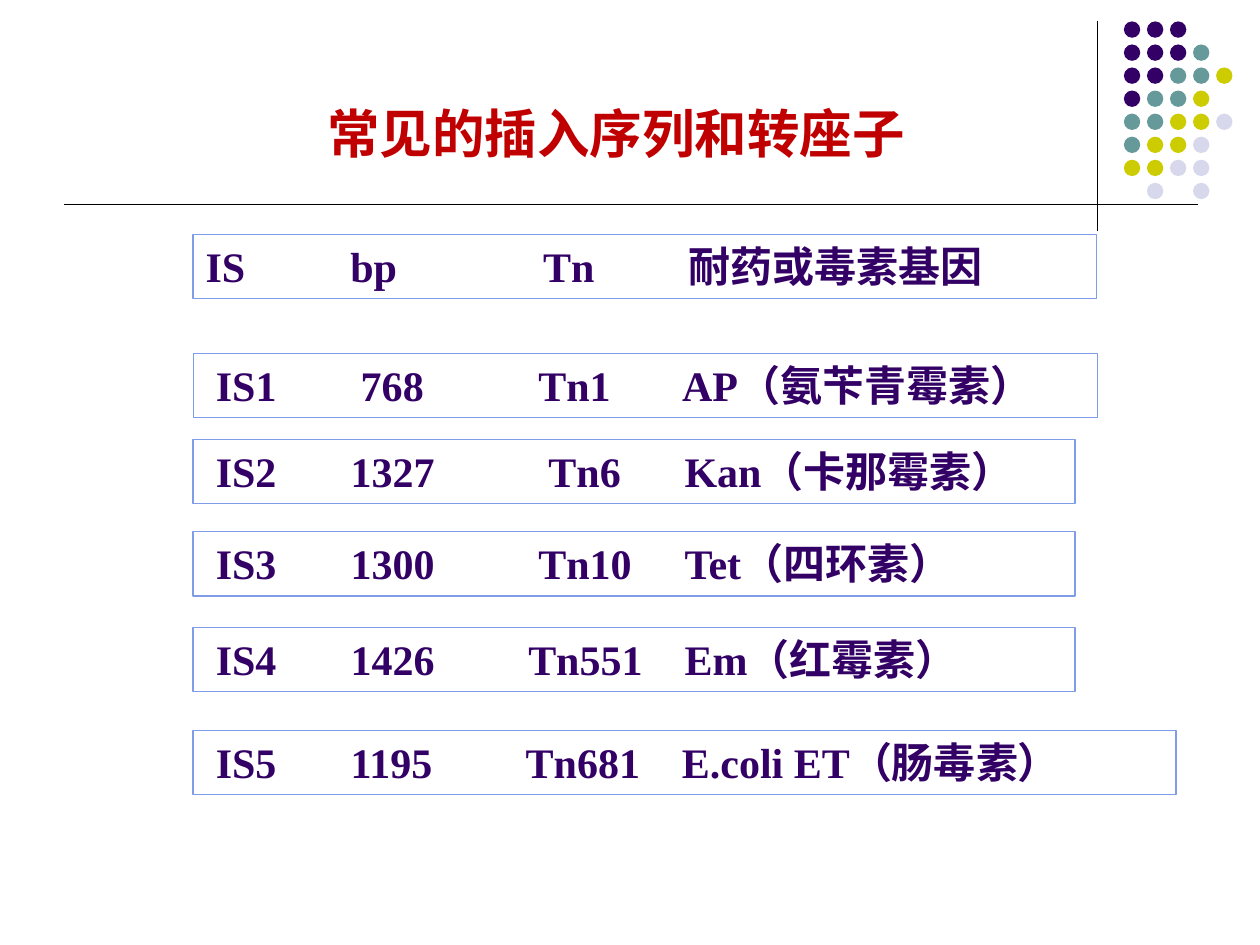
"""Build a slide listing common insertion sequences and transposons."""
from dataclasses import dataclass

from lxml import etree
from pptx import Presentation
from pptx.dml.color import RGBColor
from pptx.enum.shapes import MSO_CONNECTOR, MSO_SHAPE
from pptx.enum.text import MSO_ANCHOR, MSO_AUTO_SIZE, PP_ALIGN
from pptx.oxml.ns import qn
from pptx.slide import Slide
from pptx.text.text import TextFrame
from pptx.util import Inches, Pt

STRAIGHT = MSO_CONNECTOR.STRAIGHT
RECTANGLE, OVAL = MSO_SHAPE.RECTANGLE, MSO_SHAPE.OVAL
TOP, MIDDLE = MSO_ANCHOR.TOP, MSO_ANCHOR.MIDDLE
CENTER, JUSTIFY = PP_ALIGN.CENTER, PP_ALIGN.JUSTIFY
NO_FIT = MSO_AUTO_SIZE.NONE

WIDTH, HEIGHT = Inches(10), Inches(7.5)
TITLE_ONLY = 5
LATIN, CHINESE = "Times New Roman", "Noto Sans CJK SC"
COLORS = {
    "purple": "330066", "teal": "669999", "lime": "CCCC00", "lilac": "D8D8EC",
    "red": "C00000", "blue": "7E9CE8", "white": "FFFFFF", "black": "000000",
}
DOT_COLORS = {"P": "purple", "T": "teal", "Y": "lime", "L": "lilac"}
DOT_ROWS = ("PPP", "PPPT", "PPTTY", "PTTY", "TTYYL", "TYYL", "YYLL", " L L")
DOT_LEFT, DOT_TOP, DOT_PITCH, DOT_SIZE = 8.92, 0.17, 0.183, 0.13
ROW_LEFT, ROW_HEIGHT = 15.33, 6.8


@dataclass(frozen=True)
class Row:
    """One boxed row: slide shares in percent, inset and tab stops in inches."""
    top: float
    width: float
    cells: tuple[str, ...]
    stops: tuple[float, ...]
    inset: float = 0.18


@dataclass(frozen=True)
class Rule:
    """A straight line between two points given in percent of the slide."""
    start: tuple[float, float]
    end: tuple[float, float]
    weight: float


ROWS = (
    Row(24.8, 71.7, ("IS", "bp", "Tn", "耐药或毒素基因"), (1.15, 2.68, 3.83), 0.1),
    Row(37.4, 71.8, ("IS1", "768", "Tn1", "AP（氨苄青霉素）"), (1.15, 2.56, 3.7)),
    Row(46.5, 70, ("IS2", "1327", "Tn6", "Kan（卡那霉素）"), (1.07, 2.64, 3.72)),
    Row(56.27, 70, ("IS3", "1300", "Tn10", "Tet（四环素）"), (1.07, 2.56, 3.72)),
    Row(66.4, 70, ("IS4", "1426", "Tn551", "Em（红霉素）"), (1.07, 2.48, 3.72)),
    Row(77.3, 78, ("IS5", "1195", "Tn681", "E.coli ET（肠毒素）"), (1.07, 2.46, 3.7)),
)
RULES = (
    Rule((87.1, 2.27), (87.1, 24.4), 0.75),
    Rule((5.1, 21.6), (95.1, 21.6), 0.5),
)


def across(percent: float) -> int:
    """Turn a share of the slide width into a length."""
    return int(WIDTH * percent / 100)


def down(percent: float) -> int:
    """Turn a share of the slide height into a length."""
    return int(HEIGHT * percent / 100)


def color(name: str) -> RGBColor:
    """Look up a named colour."""
    return RGBColor.from_string(COLORS[name])


def apply(target: object, values: dict) -> None:
    """Set every attribute in a dict of format values."""
    for name, value in values.items():
        setattr(target, name, value)


def write(frame: TextFrame, text: str, size: float, ink: str, latin: str,
          alignment: PP_ALIGN, anchor: MSO_ANCHOR) -> None:
    """Write one bold line of text in Latin and Chinese fonts."""
    apply(frame, {"word_wrap": True, "auto_size": NO_FIT, "vertical_anchor": anchor})
    para = frame.paragraphs[0]
    para.alignment = alignment
    span = para.add_run()
    span.text = text
    apply(span.font, {"name": latin, "size": Pt(size), "bold": True})
    span.font.color.rgb = color(ink)
    etree.SubElement(span.font._element, qn("a:ea"), typeface=CHINESE)


def draw_rule(page: Slide, rule: Rule) -> None:
    """Draw a thin black line."""
    line = page.shapes.add_connector(
        STRAIGHT, across(rule.start[0]), down(rule.start[1]),
        across(rule.end[0]), down(rule.end[1]))
    line.line.color.rgb = color("black")
    line.line.width = Pt(rule.weight)
    etree.SubElement(line._element.spPr, qn("a:effectLst"))


def draw_dots(page: Slide) -> None:
    """Draw the grouped grid of coloured dots."""
    group = page.shapes.add_group_shape()
    for row, marks in enumerate(DOT_ROWS):
        for column, mark in enumerate(marks):
            if mark in DOT_COLORS:
                dot = group.shapes.add_shape(
                    OVAL, Inches(DOT_LEFT + column * DOT_PITCH),
                    Inches(DOT_TOP + row * DOT_PITCH), Inches(DOT_SIZE), Inches(DOT_SIZE))
                dot.shadow.inherit = False
                dot.fill.solid()
                dot.fill.fore_color.rgb = color(DOT_COLORS[mark])
                dot.line.fill.background()


def draw_title(page: Slide) -> None:
    """Place and format the title."""
    title = page.shapes.title
    apply(title, {"left": across(23.3), "top": down(10),
                  "width": across(51.2), "height": down(10.53)})
    write(title.text_frame, "常见的插入序列和转座子", 30, "red", CHINESE, CENTER, TOP)


def draw_row(page: Slide, row: Row) -> None:
    """Draw a boxed row with its cells set on tab stops."""
    box = page.shapes.add_shape(
        RECTANGLE, across(ROW_LEFT), down(row.top), across(row.width), down(ROW_HEIGHT))
    box.shadow.inherit = False
    box.fill.solid()
    box.fill.fore_color.rgb = color("white")
    box.line.color.rgb = color("blue")
    box.line.width = Pt(0.75)
    apply(box.text_frame, {"margin_left": Inches(row.inset), "margin_bottom": Inches(0.06)})
    properties = box.text_frame.paragraphs[0]._p.get_or_add_pPr()
    tabs = etree.SubElement(properties, qn("a:tabLst"))
    for stop in row.stops:
        etree.SubElement(tabs, qn("a:tab"), pos=str(Inches(stop)), algn="l")
    write(box.text_frame, "\t".join(row.cells), 24, "purple", LATIN, JUSTIFY, MIDDLE)


def main() -> None:
    """Build and save the deck."""
    deck = Presentation()
    apply(deck, {"slide_width": WIDTH, "slide_height": HEIGHT})
    page = deck.slides.add_slide(deck.slide_layouts[TITLE_ONLY])
    for rule in RULES:
        draw_rule(page, rule)
    draw_dots(page)
    draw_title(page)
    for row in ROWS:
        draw_row(page, row)
    deck.save("out.pptx")


if __name__ == "__main__":
    main()
